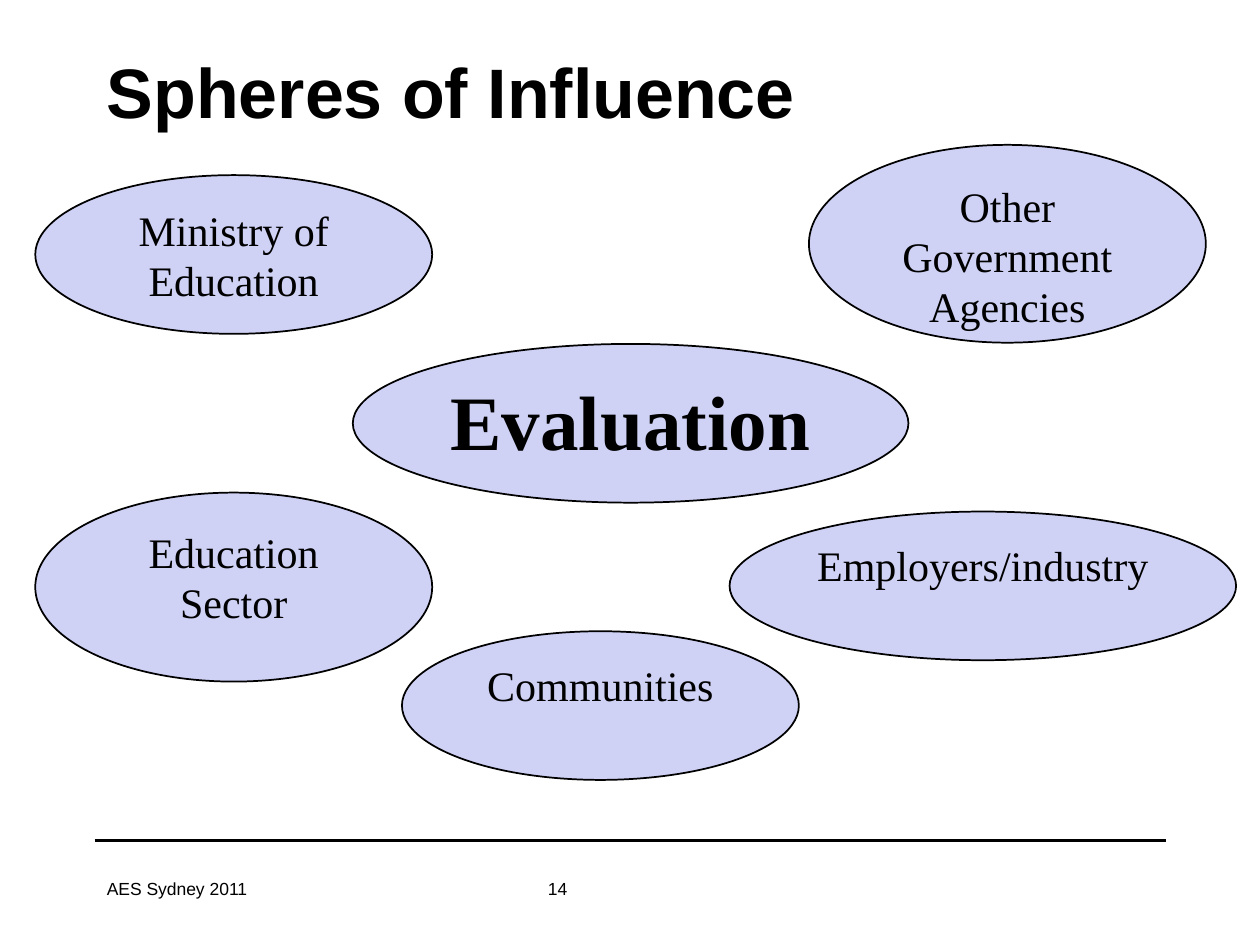
from pptx import Presentation
from pptx.dml.color import RGBColor
from pptx.enum.shapes import MSO_CONNECTOR, MSO_SHAPE
from pptx.enum.text import MSO_ANCHOR, PP_ALIGN
from pptx.oxml.ns import qn
from pptx.util import Inches, Pt
from lxml.etree import SubElement

COLUMNS, ROWS = 100, 75
CELL = Inches(0.1)
COLORS = {"ink": "000000", "sphere": "CFD2F5", "paper": "FFFFFF"}
MARGIN = 7.5
SPHERE_WIDTH = 31.5

# Label and box: column, row, columns wide, rows high
CENTRE = ("Evaluation", (28, 27.3, 44.1, 12.6))
INFLUENCES = [
    ("Ministry of Education", (2.8, 13.9, SPHERE_WIDTH, 12.6)),
    ("Other Government Agencies", (64.2, 11.5, SPHERE_WIDTH, 15.7)),
    ("Education Sector", (2.8, 39.1, SPHERE_WIDTH, 15)),
    ("Communities", (31.9, 50.1, SPHERE_WIDTH, 11.8)),
    ("Employers/industry", (57.9, 40.6, 40.2, 11.8)),
]


def color(name):
    return RGBColor.from_string(COLORS[name])


def on_grid(*cells):
    return [round(cell * CELL) for cell in cells]


def write(shape, text, size, font_name, bold=False, align=PP_ALIGN.LEFT,
          anchor=MSO_ANCHOR.TOP, wrap=True):
    frame = shape.text_frame
    frame.word_wrap = wrap
    frame.vertical_anchor = anchor
    paragraph = frame.paragraphs[0]
    paragraph.text = text
    paragraph.alignment = align
    font = paragraph.font
    font.name, font.size, font.bold = font_name, Pt(size), bold
    font.color.rgb = color("ink")


def add_title(slide, box):
    title = slide.shapes.add_textbox(*on_grid(*box))
    write(title, "Spheres of Influence", 40, "Arial", bold=True,
          anchor=MSO_ANCHOR.MIDDLE)


def add_sphere(slide, label, box, size=24, bold=False):
    sphere = slide.shapes.add_shape(MSO_SHAPE.OVAL, *on_grid(*box))
    sphere.shadow.inherit = False
    sphere.fill.solid()
    sphere.fill.fore_color.rgb = color("sphere")
    sphere.line.color.rgb = color("ink")
    sphere.line.width = Pt(1)
    write(sphere, label, size, "Times New Roman", bold, PP_ALIGN.CENTER)


def add_footer(slide, box):
    """Draw the rule along the top of the box and the two notes below it."""
    left, top, width, height = box
    rule = slide.shapes.add_connector(
        MSO_CONNECTOR.STRAIGHT, *on_grid(left, top, left + width, top))
    rule.line.color.rgb = color("ink")
    rule.line.width = Pt(2)
    SubElement(rule._element.spPr, qn("a:effectLst"))
    note_height = 2.7
    for text, column, columns in (("AES Sydney 2011", left, 13.3),
                                  ("14", left + 35, 3.7)):
        note = slide.shapes.add_textbox(
            *on_grid(column, top + height - note_height, columns, note_height))
        write(note, text, 10, "Arial", wrap=False)


def build_slide(presentation):
    slide = presentation.slides.add_slide(presentation.slide_layouts[6])
    slide.background.fill.solid()
    slide.background.fill.fore_color.rgb = color("paper")
    content_width = COLUMNS - 2 * MARGIN
    add_footer(slide, (MARGIN, 66.7, content_width, 5.2))
    add_title(slide, (MARGIN, 3.6, content_width, 7.1))
    add_sphere(slide, *CENTRE, size=44, bold=True)
    for label, box in INFLUENCES:
        add_sphere(slide, label, box)


def main():
    presentation = Presentation()
    presentation.slide_width = COLUMNS * CELL
    presentation.slide_height = ROWS * CELL
    build_slide(presentation)
    presentation.save("out.pptx")


if __name__ == "__main__":
    main()
